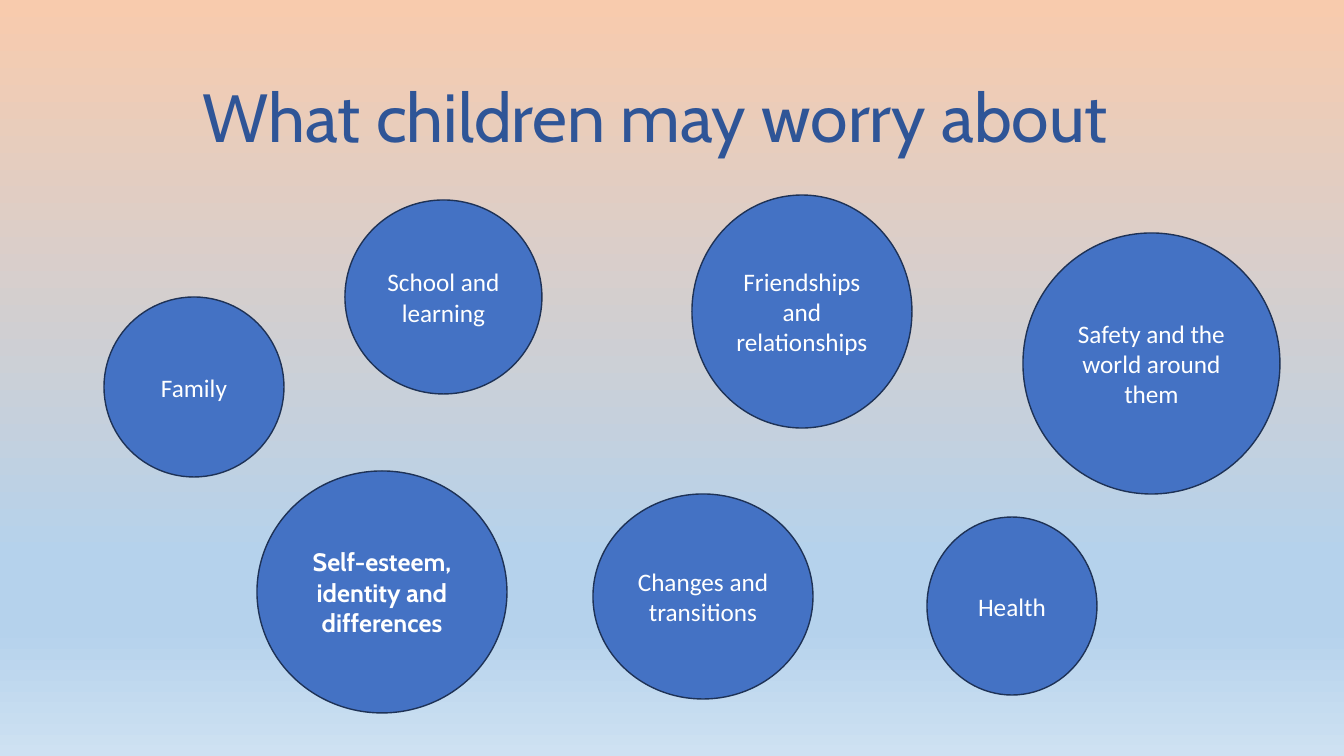
from lxml import etree
from pptx import Presentation
from pptx.dml.color import RGBColor
from pptx.enum.shapes import MSO_SHAPE
from pptx.enum.text import MSO_ANCHOR, PP_ALIGN
from pptx.oxml.ns import qn
from pptx.util import Emu, Pt

ELLIPSE = MSO_SHAPE.OVAL
MIDDLE = MSO_ANCHOR.MIDDLE
LEFT = PP_ALIGN.LEFT
CENTER = PP_ALIGN.CENTER

PAGE_WIDTH, PAGE_HEIGHT = 1344, 756
EMU_PER_PX = 12192000 / PAGE_WIDTH

SKY = [(0, "F8CBAD"), (74, "B5D2EC"), (83, "B5D2EC"), (100, "CEE1F2")]

WORRIES = [
    ("Self-esteem, identity and differences", (257, 471, 250, 242), {"font": "Cabin", "bold": True}),
    ("School and learning", (345, 200, 197, 194), {}),
    ("Family", (104, 297, 180, 180), {}),
    ("Friendships and relationships", (692, 195, 220, 233), {}),
    ("Safety and the world around them", (1023, 233, 257, 261), {}),
    ("Health", (927, 517, 170, 178), {}),
    ("Changes and transitions", (593, 494, 220, 205), {}),
]


def px(length):
    return Emu(round(length * EMU_PER_PX))


def color(hex_string):
    return RGBColor.from_string(hex_string)


def write(frame, text, *, size=18, font="Calibri", ink="FFFFFF", bold=False, align=CENTER, spacing=1.0):
    frame.word_wrap = True
    frame.vertical_anchor = MIDDLE
    para = frame.paragraphs[0]
    para.alignment = align
    para.line_spacing = spacing
    span = para.add_run()
    span.text = text
    span.font.size = Pt(size)
    span.font.name = font
    span.font.bold = bold
    span.font.color.rgb = color(ink)


class Page:
    fill = "4472C4"
    outline = "1E3256"
    title_ink = "2F5597"

    def __init__(self, deck):
        self.page = deck.slides.add_slide(deck.slide_layouts[6])

    def background(self, stops):
        fill = self.page.background.fill
        fill.gradient()
        fill.gradient_angle = 270
        stop_list = self.page.element.find(".//" + qn("a:gsLst"))
        for stop in list(stop_list):
            stop_list.remove(stop)
        for percent, hex_string in stops:
            stop = etree.SubElement(stop_list, qn("a:gs"), pos=str(percent * 1000))
            etree.SubElement(stop, qn("a:srgbClr"), val=hex_string)

    def title(self, text, place):
        box = self.page.shapes.add_textbox(*map(px, place))
        write(box.text_frame, text, size=48.6, font="Cabin", ink=self.title_ink, align=LEFT, spacing=0.9)

    def bubble(self, text, place, **text_format):
        shape = self.page.shapes.add_shape(ELLIPSE, *map(px, place))
        shape.shadow.inherit = False
        shape.fill.solid()
        shape.fill.fore_color.rgb = color(self.fill)
        shape.line.color.rgb = color(self.outline)
        shape.line.width = Pt(1)
        write(shape.text_frame, text, **text_format)


def main():
    deck = Presentation()
    deck.slide_width = px(PAGE_WIDTH)
    deck.slide_height = px(PAGE_HEIGHT)
    page = Page(deck)
    page.background(SKY)
    page.title("What children may worry about", (193, 46, 958, 148))
    for text, place, text_format in WORRIES:
        page.bubble(text, place, **text_format)
    deck.save("out.pptx")


if __name__ == "__main__":
    main()
